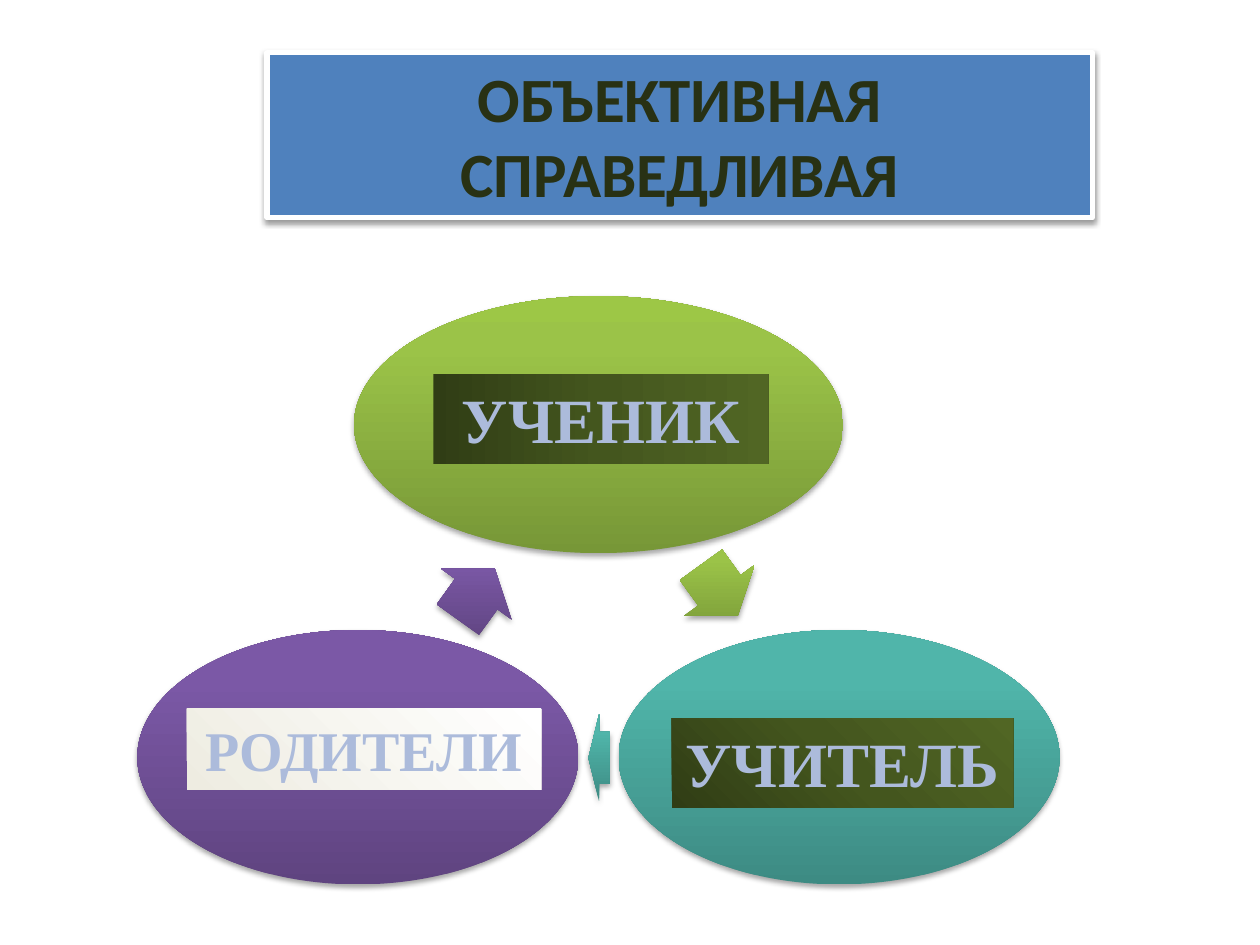
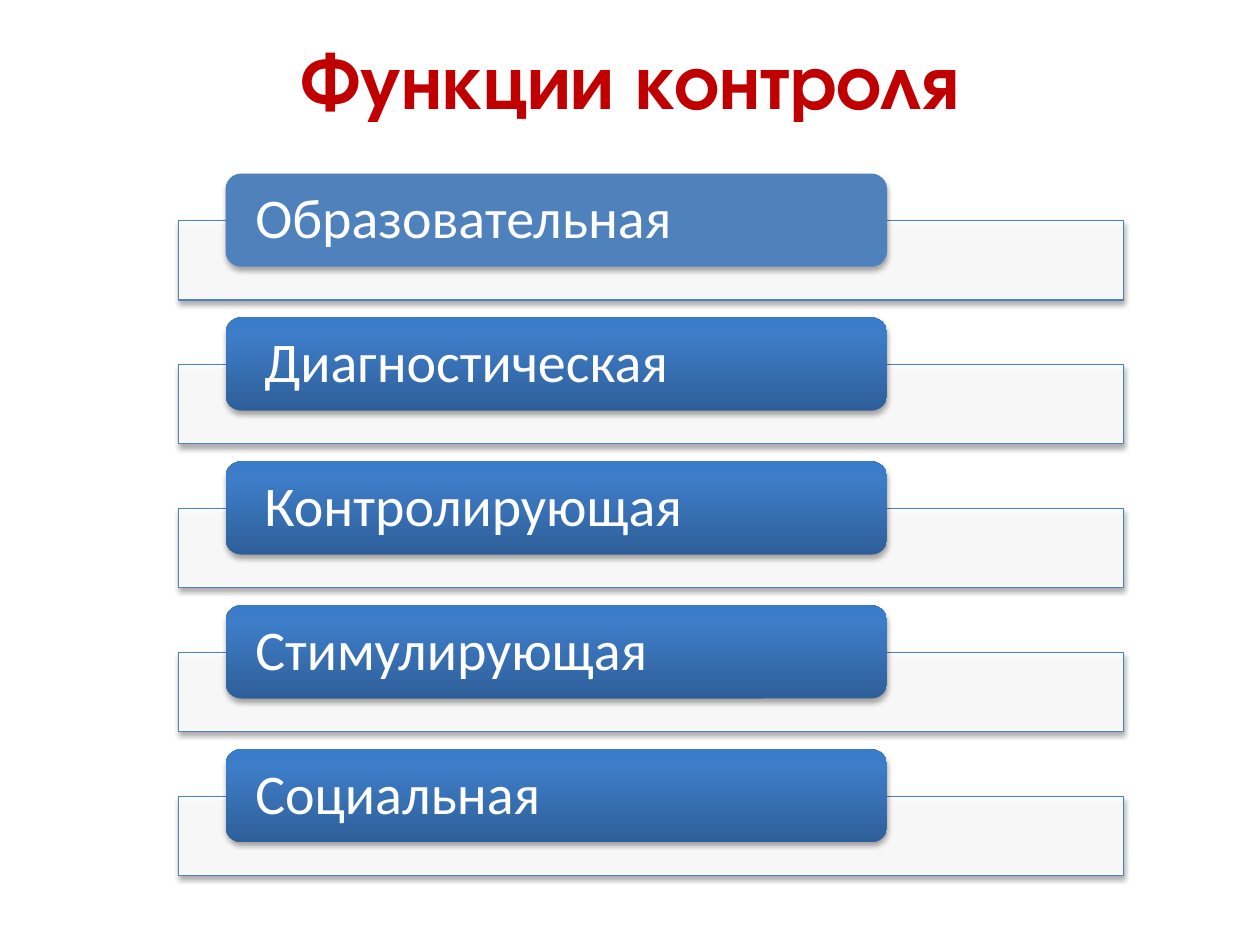
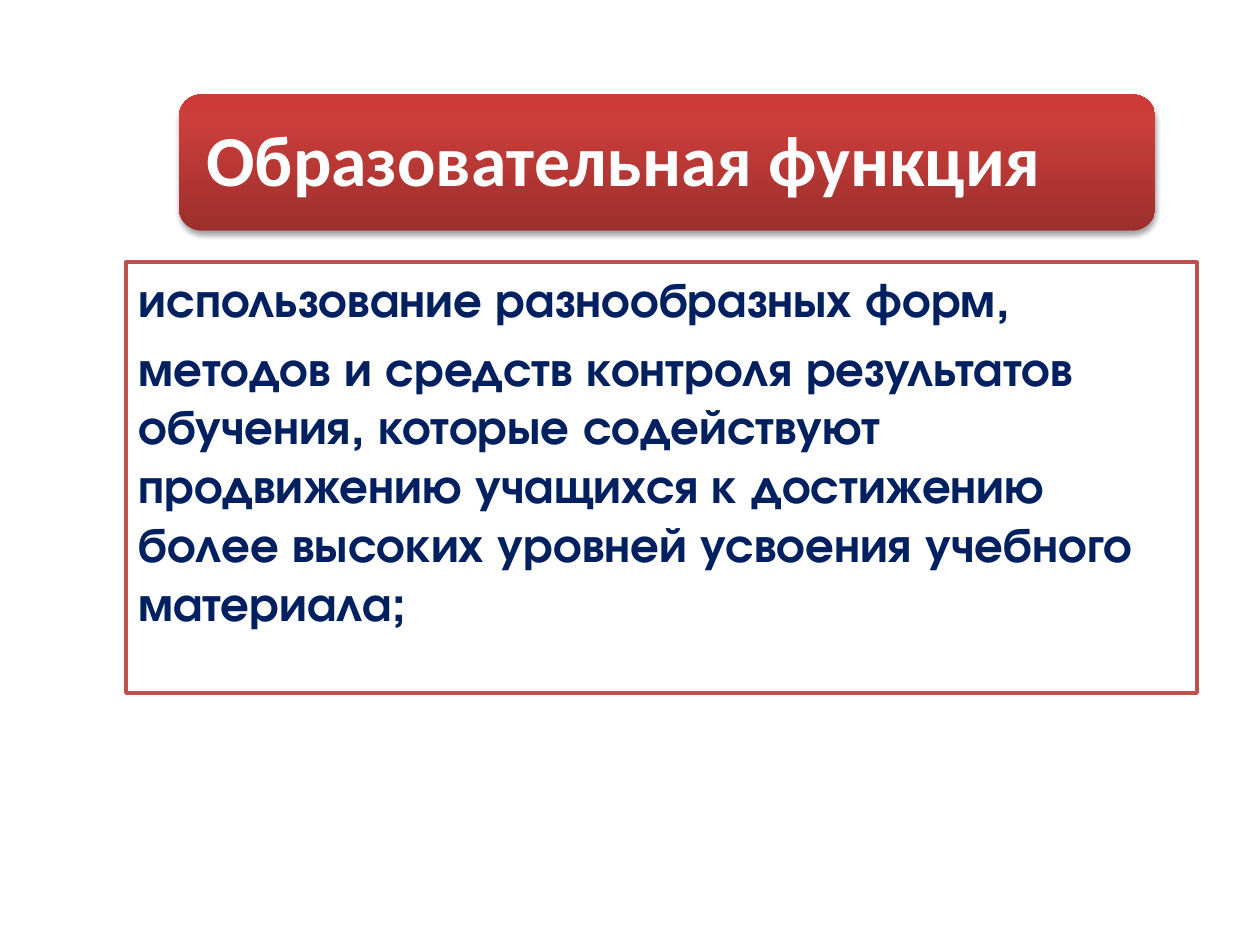
from lxml import etree
from pptx import Presentation
from pptx.dml.color import RGBColor
from pptx.enum.shapes import MSO_SHAPE as Preset
from pptx.enum.text import MSO_ANCHOR as Anchor, MSO_AUTO_SIZE as AutoSize, PP_ALIGN as Align
from pptx.oxml.ns import qn
from pptx.util import Pt

# Shared colours and fonts; a gradient is (stops, angle), angle None is radial
WHITE = "FFFFFF"
BLUE = "4F81BD"
RED = "C0504D"
LABEL_TEXT = "ACBBDB"
BODY_FONT = "Calibri"
DISPLAY_FONT = "TeX Gyre Adventor"
LABEL_FONT = "Times New Roman"


def glossy(dark, middle, light):
    return [(0, dark), (80, middle), (100, light)], 270


GREEN_GLOSS = glossy("779737", "9BC348", "9DC746")
TEAL_GLOSS = glossy("3D8B83", "50B5AA", "4EB8AC")
PURPLE_GLOSS = glossy("5F4480", "7B58A6", "7C57A8")
BLUE_GLOSS = glossy("2F5F99", "3D7CC7", "3A7CCB")
RED_GLOSS = glossy("9C2F2D", "CB3E3A", "CE3B37")
OLIVE_STOPS = [(0, "303D15"), (50, "44561E"), (100, "516624")]
CREAM_STOPS = [(0, WHITE), (100, "EEECE1")]


def rgb(colour):
    return RGBColor.from_string(colour)


def child(parent, tag, **attributes):
    return etree.SubElement(parent, qn(tag), {k: str(v) for k, v in attributes.items()})


def place(shape, left, top, width, height):
    shape.left, shape.top = Pt(left), Pt(top)
    shape.width, shape.height = Pt(width), Pt(height)


# Fills, lines and shadows
def gradient(shape, stops, angle):
    shape.fill.gradient()
    grad = shape.element.spPr.find(qn("a:gradFill"))
    for old in list(grad):
        grad.remove(old)
    grad.set("rotWithShape", "0")
    stop_list = child(grad, "a:gsLst")
    for position, colour in stops:
        child(child(stop_list, "a:gs", pos=position * 1000), "a:srgbClr", val=colour)
    if angle is None:
        radial = child(grad, "a:path", path="circle")
        child(radial, "a:fillToRect", l=100000, b=100000)
    else:
        child(grad, "a:lin", ang=angle * 60000, scaled=0)


def paint(shape, fill, line=None, width=0.75, opacity=None):
    if isinstance(fill, str):
        shape.fill.solid()
        shape.fill.fore_color.rgb = rgb(fill)
        if opacity:
            colour = shape.element.spPr.find(qn("a:solidFill"))[0]
            child(colour, "a:alpha", val=opacity * 1000)
    else:
        gradient(shape, *fill)
    if line:
        shape.line.color.rgb = rgb(line)
        shape.line.width = Pt(width)
    else:
        shape.line.fill.background()
    shape.shadow.inherit = False


def drop_shadow(shape, distance=1.8, opacity=35):
    effects = shape.element.spPr.find(qn("a:effectLst"))
    shadow = child(effects, "a:outerShdw", blurRad=Pt(3.1), dist=Pt(distance),
                   dir=90 * 60000, rotWithShape=0)
    child(child(shadow, "a:srgbClr", val="000000"), "a:alpha", val=opacity * 1000)


def add_figure(page, preset, frame, fill, shadow=True, **style):
    figure = page.shapes.add_shape(preset, *map(Pt, frame))
    paint(figure, fill, **style)
    if shadow:
        drop_shadow(figure)
    return figure


# Text
def write(shape, lines, size, colour, font=BODY_FONT, bold=False, align=Align.LEFT,
          anchor=Anchor.MIDDLE, insets=(7.2, 3.6, 7.2, 3.6), spacing=1.0, before=0, wrap=True):
    frame = shape.text_frame
    frame.auto_size = AutoSize.NONE
    frame.word_wrap = wrap
    frame.vertical_anchor = anchor
    (frame.margin_left, frame.margin_top,
     frame.margin_right, frame.margin_bottom) = map(Pt, insets)
    frame.text = "\n".join(lines)
    for index, para in enumerate(frame.paragraphs):
        properties = para._p.get_or_add_pPr()
        properties.set("marL", "0")
        properties.set("indent", "0")
        child(properties, "a:buNone")
        para.alignment = align
        para.line_spacing = spacing
        para.space_before = Pt(before if index else 0)
        para.font.name = font
        para.font.size = Pt(size)
        para.font.bold = bold
        para.font.color.rgb = rgb(colour)


def add_label(page, frame, text, fill, size=36, wrap=True):
    label = add_figure(page, Preset.RECTANGLE, frame, fill, shadow=False)
    write(label, [text], size, LABEL_TEXT, LABEL_FONT, bold=True,
          align=Align.CENTER, anchor=Anchor.TOP, wrap=wrap)


# Slides
def participants_page(deck):
    page = deck.slides.add_slide(deck.slide_layouts[5])
    title = page.shapes.title
    place(title, 152.6, 30.2, 471.6, 94.3)
    paint(title, BLUE, line=WHITE, width=3)
    drop_shadow(title, distance=1.6, opacity=38)
    write(title, ["ОБЪЕКТИВНАЯ", "СПРАВЕДЛИВАЯ"], 36, "283114", bold=True,
          align=Align.CENTER, anchor=Anchor.TOP)

    # Cycle: each oval is followed by the arrow to the next one
    cycle = [
        (GREEN_GLOSS, (202.3, 169.2, 279.4, 146.9), (393.1, 312.5, 36, 49.7), 54.2),
        (TEAL_GLOSS, (353.5, 360, 252, 145.4), (336.2, 408.2, 12.2, 49.7), 180),
        (PURPLE_GLOSS, (78.5, 360, 252, 145.4), (254.2, 314.6, 36, 49.7), 305.8),
    ]
    for fill, oval_frame, arrow_frame, turn in cycle:
        add_figure(page, Preset.OVAL, oval_frame, fill)
        arrow = add_figure(page, Preset.RIGHT_ARROW, arrow_frame, fill)
        arrow.adjustments[0], arrow.adjustments[1] = 0.6, 0.5
        arrow.rotation = turn

    add_label(page, (247.7, 213.8, 191.5, 51.1), "УЧЕНИК", (OLIVE_STOPS, 0))
    add_label(page, (106.6, 405.1, 202.6, 46.3), "РОДИТЕЛИ", (CREAM_STOPS, None), size=32)
    add_label(page, (383.8, 410.4, 195.1, 51.1), "УЧИТЕЛЬ", (OLIVE_STOPS, 315), wrap=False)


def functions_page(deck):
    page = deck.slides.add_slide(deck.slide_layouts[5])
    place(page.shapes.title, 36, 0, 648, 90)
    write(page.shapes.title, ["Функции контроля"], 44, "C00000", DISPLAY_FONT,
          bold=True, align=Align.CENTER)

    # Rows: a pale slab with a named tab; some names are indented a little
    rows = [
        ("Образовательная", BLUE, 0),
        ("Диагностическая", BLUE_GLOSS, 5.2),
        ("Контролирующая", BLUE_GLOSS, 5.2),
        ("Стимулирующая", BLUE_GLOSS, 0),
        ("Социальная", BLUE_GLOSS, 0),
    ]
    pitch = 82.25
    for index, (name, fill, indent) in enumerate(rows):
        top = 99.2 + index * pitch
        add_figure(page, Preset.RECTANGLE, (102.2, top + 26.8, 540, 45.4), WHITE,
                   line=BLUE, opacity=90)
        tab = add_figure(page, Preset.ROUNDED_RECTANGLE, (128.9, top, 378, 53.2), fill)
        write(tab, [name], 32, WHITE, insets=(14.4 + indent, 0, 14.4, 0), spacing=0.9)


def education_page(deck):
    page = deck.slides.add_slide(deck.slide_layouts[1])
    title, body = page.shapes.title, page.placeholders[1]

    # Banner behind the title
    banner = add_figure(page, Preset.ROUNDED_RECTANGLE, (102.2, 54, 558, 77.8), RED_GLOSS)
    title.element.addprevious(banner.element)
    place(title, 105.8, 58.3, 550, 69.8)
    write(title, ["Образовательная функция"], 41, WHITE, bold=True,
          insets=(12.2,) * 4, spacing=0.9)

    # Framed description
    place(body, 72, 149.8, 612, 246.2)
    paint(body, WHITE, line=RED, width=2)
    write(body, [
        "использование разнообразных форм,",
        "методов и средств контроля результатов обучения, которые содействуют "
        "продвижению учащихся к достижению более высоких уровней усвоения "
        "учебного материала;",
    ], 28, "002060", DISPLAY_FONT, bold=True, anchor=Anchor.TOP, before=5.6)


def main():
    deck = Presentation()
    deck.slide_width, deck.slide_height = Pt(720), Pt(540)
    participants_page(deck)
    functions_page(deck)
    education_page(deck)
    deck.save("out.pptx")


if __name__ == "__main__":
    main()
